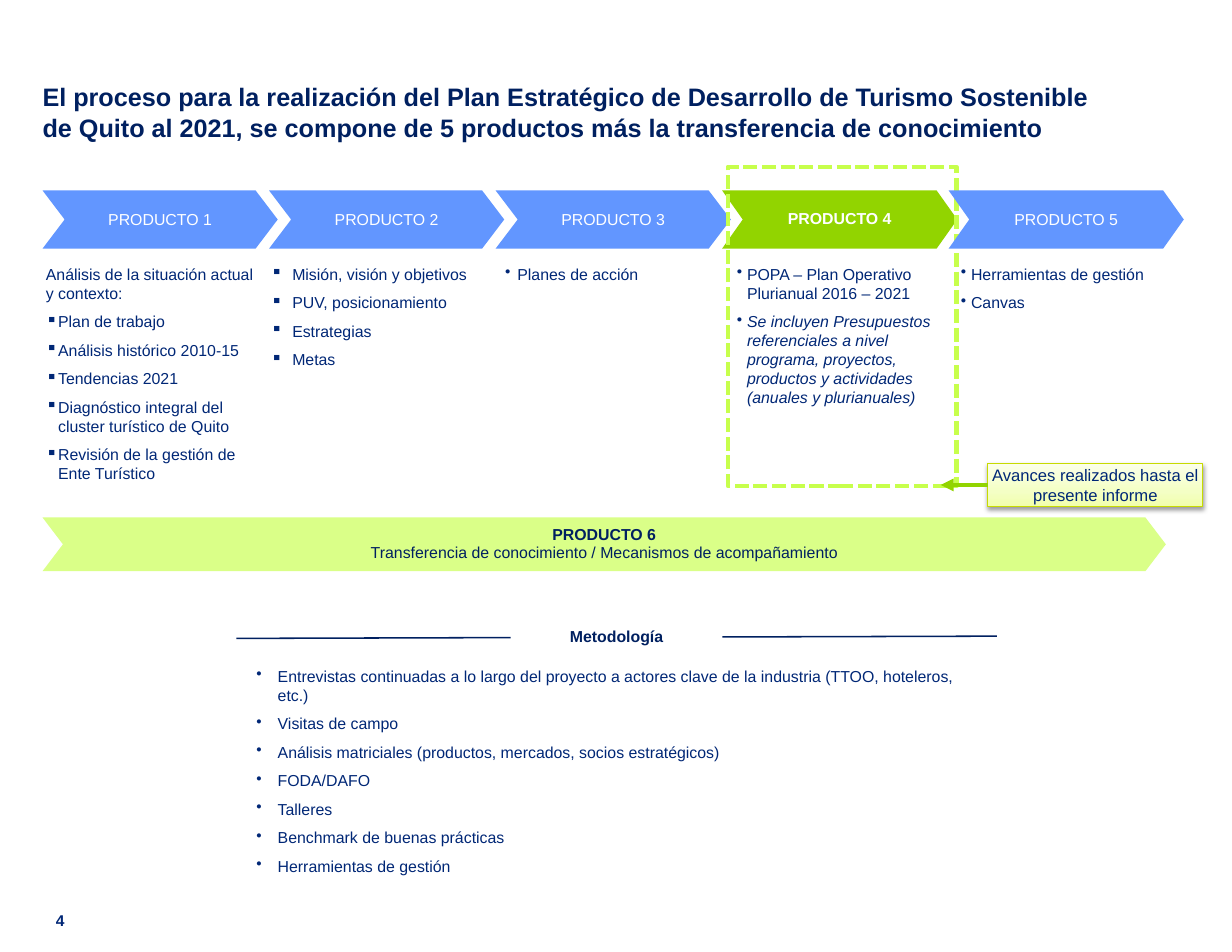
"""Build the slide that outlines the products of the Quito tourism plan."""
from dataclasses import dataclass

from lxml import etree
from pptx import Presentation
from pptx.dml.color import RGBColor
from pptx.enum.dml import MSO_LINE
from pptx.enum.shapes import MSO_CONNECTOR, MSO_SHAPE
from pptx.enum.text import MSO_ANCHOR, PP_ALIGN
from pptx.oxml.ns import qn
from pptx.util import Inches, Pt

RECTANGLE, CHEVRON = MSO_SHAPE.RECTANGLE, MSO_SHAPE.CHEVRON
STRAIGHT, DASHED = MSO_CONNECTOR.STRAIGHT, MSO_LINE.SQUARE_DOT
TOP, MIDDLE, BOTTOM = MSO_ANCHOR.TOP, MSO_ANCHOR.MIDDLE, MSO_ANCHOR.BOTTOM
LEFT, CENTER = PP_ALIGN.LEFT, PP_ALIGN.CENTER

NAVY = RGBColor(0x00, 0x20, 0x60)
TEXT_BLUE = RGBColor(0x00, 0x27, 0x76)
BLUE = RGBColor(0x62, 0x96, 0xFF)
GREEN = RGBColor(0x92, 0xD4, 0x00)
LIME = RGBColor(0xC7, 0xFF, 0x4C)
PALE_LIME = RGBColor(0xDA, 0xFF, 0x88)
OLIVE = RGBColor(0xC7, 0xDB, 0x00)
WHITE = RGBColor(0xFF, 0xFF, 0xFF)
CALLOUT_STOPS = ((0, "F1FFAC"), (35000, "F4FFC5"), (100000, "FBFFE9"))

FONT = "Arial"
BODY_SIZE = 10.2
MARGIN = 0.38
CHEVRON_TOP, CHEVRON_WIDTH, CHEVRON_HEIGHT = 1.7, 2.1, 0.52
CHEVRON_PITCH = (8.47 - MARGIN) / 4
LIST_TOP = 2.35


@dataclass
class Line:
    text: str
    size: float = BODY_SIZE
    color: RGBColor = TEXT_BLUE
    bold: bool = False
    italic: bool = False
    bullet: str = ""
    indent: float = 0
    align: PP_ALIGN = LEFT
    after: float = 0
    spacing: float | Pt | None = None


@dataclass
class Product:
    number: int
    left: float
    width: float
    height: float
    lines: list[Line]
    adjustment: float = 0.38
    current: bool = False


def items(texts: list[str], bullet: str, indent: float, italic: bool = False) -> list[Line]:
    return [Line(text, bullet=bullet, indent=indent, italic=italic, after=6.1) for text in texts]


PRODUCTS = [
    Product(1, 0.4, 1.96, 2, [
        Line("Análisis de la situación actual y contexto:", after=6.1),
        *items(["Plan de trabajo", "Análisis histórico 2010-15", "Tendencias 2021",
                "Diagnóstico integral del cluster turístico de Quito",
                "Revisión de la gestión de Ente Turístico"], "▪", 0.11)]),
    Product(2, 2.41, 2.03, 0.97, items(
        ["Misión, visión y objetivos", "PUV, posicionamiento", "Estrategias", "Metas"], "▪", 0.19)),
    Product(3, 4.5, 1.97, 0.19, items(["Planes de acción"], "•", 0.11)),
    Product(4, 6.57, 1.97, 1.3, [
        *items(["POPA – Plan Operativo Plurianual 2016 – 2021"], "•", 0.09),
        *items(["Se incluyen Presupuestos referenciales a nivel programa, proyectos, "
                "productos y actividades (anuales y plurianuales)"], "•", 0.09, italic=True)],
        0.355, current=True),
    Product(5, 8.57, 1.97, 0.45, items(["Herramientas de gestión", "Canvas"], "•", 0.09), 0.355),
]
METHODS = items([
    "Entrevistas continuadas a lo largo del proyecto a actores clave de la industria "
    "(TTOO, hoteleros, etc.)",
    "Visitas de campo",
    "Análisis matriciales (productos, mercados, socios estratégicos)",
    "FODA/DAFO",
    "Talleres",
    "Benchmark de buenas prácticas",
    "Herramientas de gestión"], "•", 0.19)


def write(shape, lines: list[Line], inset_x: float = 0.01, inset_y: float = 0.01, anchor=TOP) -> None:
    frame = shape.text_frame
    frame.word_wrap = True
    frame.vertical_anchor = anchor
    frame.margin_left = frame.margin_right = Inches(inset_x)
    frame.margin_top = frame.margin_bottom = Inches(inset_y)
    for index, line in enumerate(lines):
        para = frame.add_paragraph() if index else frame.paragraphs[0]
        para.text = line.text
        para.alignment = line.align
        if line.bullet:
            properties = para._p.get_or_add_pPr()
            properties.set("marL", str(Inches(line.indent)))
            properties.set("indent", str(-Inches(line.indent)))
            etree.SubElement(properties, qn("a:buChar"), char=line.bullet)
        para.space_after = Pt(line.after)
        if line.spacing:
            para.line_spacing = line.spacing
        para.font.name = FONT
        para.font.size = Pt(line.size)
        para.font.bold = line.bold
        para.font.italic = line.italic
        para.font.color.rgb = line.color


def add_text(page, left: float, top: float, width: float, height: float,
             lines: list[Line], inset: float = 0.01) -> None:
    box = page.shapes.add_textbox(Inches(left), Inches(top), Inches(width), Inches(height))
    write(box, lines, inset, inset)


def add_box(page, kind: MSO_SHAPE, left: float, top: float, width: float, height: float,
            fill: RGBColor | None = None):
    shape = page.shapes.add_shape(kind, Inches(left), Inches(top), Inches(width), Inches(height))
    shape.shadow.inherit = False
    shape.line.fill.background()
    if fill is None:
        shape.fill.background()
    else:
        shape.fill.solid()
        shape.fill.fore_color.rgb = fill
    return shape


def add_chevron(page, left: float, top: float, width: float, height: float,
                fill: RGBColor, adjustment: float, lines: list[Line]) -> None:
    shape = add_box(page, CHEVRON, left, top, width, height, fill)
    shape.adjustments[0] = adjustment
    write(shape, lines, 0.04, 0.05, MIDDLE)


def add_line(page, start: tuple[float, float], end: tuple[float, float],
             color: RGBColor, width: float, arrow: bool = False) -> None:
    connector = page.shapes.add_connector(STRAIGHT, *map(Inches, start + end))
    connector.line.color.rgb = color
    connector.line.width = Pt(width)
    if arrow:
        etree.SubElement(connector.line._get_or_add_ln(), qn("a:tailEnd"), type="triangle")
    etree.SubElement(connector._element.spPr, qn("a:effectLst"))


def add_product(page, product: Product) -> None:
    label = Line(f"PRODUCTO {product.number}", color=WHITE, bold=product.current, align=CENTER,
                 spacing=0.95 if product.current else None)
    add_chevron(page, MARGIN + (product.number - 1) * CHEVRON_PITCH, CHEVRON_TOP, CHEVRON_WIDTH,
                CHEVRON_HEIGHT, GREEN if product.current else BLUE, product.adjustment, [label])
    add_text(page, product.left, LIST_TOP, product.width, product.height, product.lines)
    if product.current:
        frame = add_box(page, RECTANGLE, 6.5, 1.49, 2.04, 2.85)
        frame.line.color.rgb = LIME
        frame.line.width = Pt(3)
        frame.line.dash_style = DASHED


def add_callout(page) -> None:
    callout = add_box(page, RECTANGLE, 8.82, 4.14, 1.92, 0.38)
    callout.line.color.rgb = OLIVE
    callout.line.width = Pt(0.75)
    callout.fill.gradient()
    callout.fill.gradient_angle = 90
    properties = callout._element.spPr
    stops = properties.find(".//" + qn("a:gsLst"))
    stops.clear()
    for position, color in CALLOUT_STOPS:
        stop = etree.SubElement(stops, qn("a:gs"), pos=str(position))
        etree.SubElement(stop, qn("a:srgbClr"), val=color)
    shadow = etree.SubElement(properties.find(qn("a:effectLst")), qn("a:outerShdw"),
                              blurRad=str(Pt(3.1)), dist=str(Pt(1.6)), dir="5400000", rotWithShape="0")
    shade = etree.SubElement(shadow, qn("a:srgbClr"), val="000000")
    etree.SubElement(shade, qn("a:alpha"), val="38000")
    write(callout, [Line("Avances realizados hasta el presente informe", 10.7, align=CENTER, after=3)])


def main() -> None:
    deck = Presentation()
    deck.slide_width, deck.slide_height = Inches(11), Inches(8.5)
    page = deck.slides.add_slide(deck.slide_layouts[6])

    add_text(page, MARGIN, 0.73, 9.52, 0.7, [Line(
        "El proceso para la realización del Plan Estratégico de Desarrollo de Turismo Sostenible "
        "de Quito al 2021, se compone de 5 productos más la transferencia de conocimiento",
        16.2, NAVY, bold=True)], 0)
    add_text(page, 0.5, 8.13, 0.34, 0.18, [Line("4", 10, bold=True, spacing=Pt(12))], 0)

    add_line(page, (2.11, 5.7), (8.9, 5.68), NAVY, 1)
    heading = add_box(page, RECTANGLE, 4.56, 5.61, 1.89, 0.16, WHITE)
    write(heading, [Line("Metodología", color=NAVY, bold=True, align=CENTER, spacing=0.95)],
          0.08, 0, BOTTOM)
    add_text(page, 2.28, 5.94, 6.54, 1.72, METHODS)

    for product in PRODUCTS:
        add_product(page, product)
    add_callout(page)
    add_line(page, (8.82, 4.33), (8.4, 4.33), GREEN, 2.75, arrow=True)
    add_chevron(page, MARGIN, 4.62, 10.03, 0.48, PALE_LIME, 0.38, [
        Line("PRODUCTO 6", color=NAVY, bold=True, align=CENTER, spacing=0.95),
        Line("Transferencia de conocimiento / Mecanismos de acompañamiento",
             color=NAVY, align=CENTER, spacing=0.95)])
    deck.save("out.pptx")


if __name__ == "__main__":
    main()
